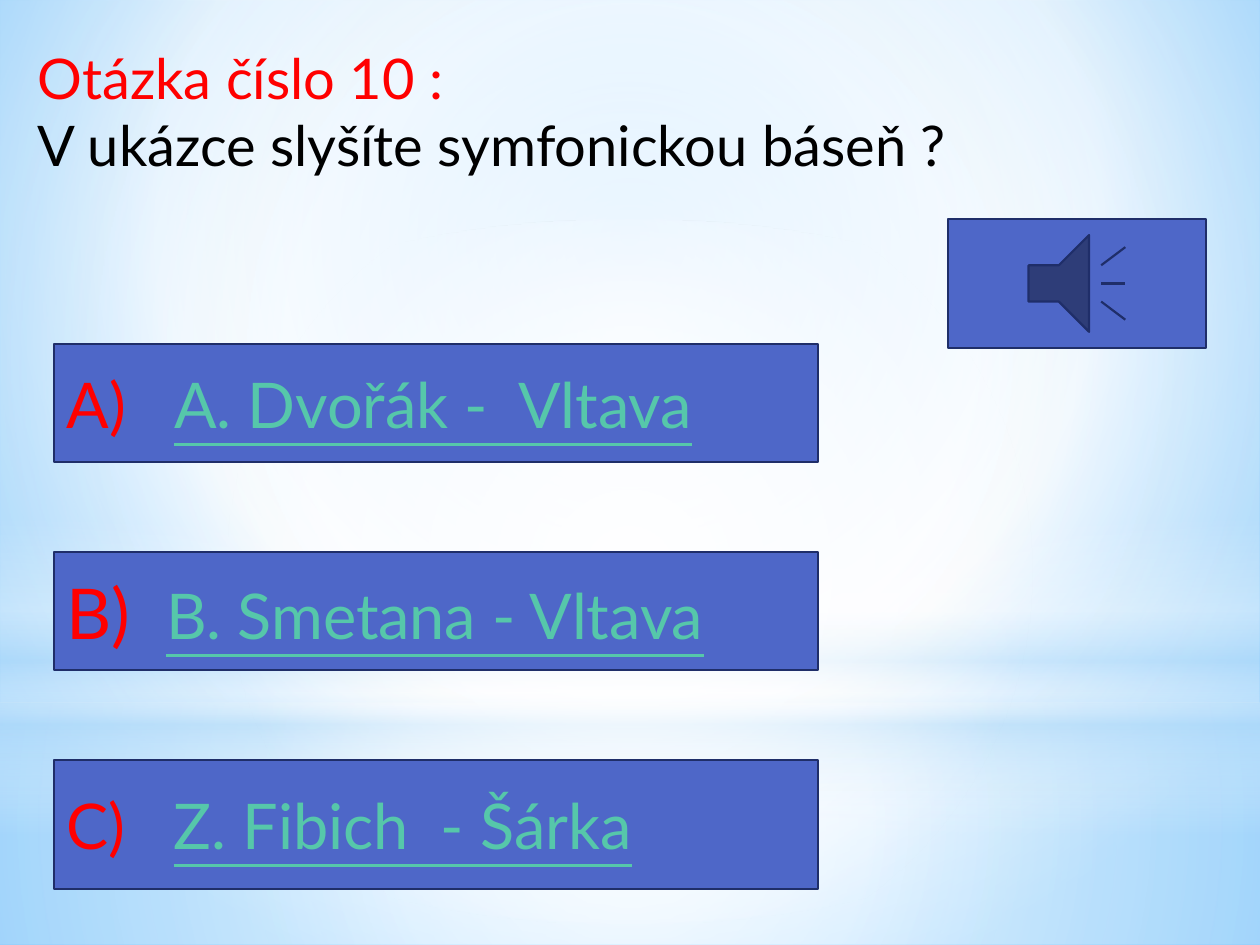
from lxml.etree import SubElement
from pptx import Presentation
from pptx.dml.color import RGBColor
from pptx.enum.shapes import MSO_SHAPE
from pptx.enum.text import MSO_ANCHOR, MSO_AUTO_SIZE, PP_ALIGN
from pptx.oxml.ns import qn
from pptx.util import Emu, Pt

SCALE = 914400 / 126
WIDTH, HEIGHT = 1260, 945
FONT = "Lato"
RED = RGBColor(0xFF, 0x00, 0x00)
BLACK = RGBColor(0x00, 0x00, 0x00)
WHITE = RGBColor(0xFF, 0xFF, 0xFF)
BLUE = RGBColor(0x4E, 0x67, 0xC8)
NAVY = RGBColor(0x1F, 0x2E, 0x69)
GREEN = RGBColor(0x56, 0xC7, 0xAA)
SKY = RGBColor(0x9E, 0xD5, 0xFF)
DEEP_SKY = RGBColor(0x5B, 0xB9, 0xFF)
PALE = RGBColor(0xB4, 0xDC, 0xFA)
CENTER = (50, 50, 50, 50)


def px(n):
    return Emu(round(n * SCALE))


def add_run(p, text, size=36, color=BLACK, underline=None):
    r = p.add_run()
    r.text = text
    r.font.name = FONT
    r.font.size = Pt(size)
    r.font.color.rgb = color
    r.font.underline = underline
    return r


def set_gradient(fill, owner, stops, focus=None, angle=90):
    fill.gradient()
    grad = next(owner.iter(qn("a:gradFill")))
    grad.clear()
    grad.set("rotWithShape", "1")
    gs_list = SubElement(grad, qn("a:gsLst"))
    for pos, color, alpha in stops:
        gs = SubElement(gs_list, qn("a:gs"), pos=str(pos * 1000))
        clr = SubElement(gs, qn("a:srgbClr"), val=str(color))
        if alpha < 100:
            SubElement(clr, qn("a:alpha"), val=str(alpha * 1000))
    if focus:
        path = SubElement(grad, qn("a:path"), path="circle")
        sides = {side: str(n * 1000) for side, n in zip("ltrb", focus)}
        SubElement(path, qn("a:fillToRect"), **sides)
    else:
        SubElement(grad, qn("a:lin"), ang=str(angle * 60000), scaled="0")


class QuizSlide:
    def __init__(self, prs):
        self.s = prs.slides.add_slide(prs.slide_layouts[5])

    def background(self, stops, focus):
        set_gradient(self.s.background.fill, self.s.element, stops, focus)

    def shape(self, kind, x, y, w, h):
        sp = self.s.shapes.add_shape(kind, px(x), px(y), px(w), px(h))
        sp.shadow.inherit = False
        return sp

    def glow(self, kind, y, h, stops, focus=None):
        sp = self.shape(kind, 0, y, WIDTH, h)
        sp.line.fill.background()
        set_gradient(sp.fill, sp.element, stops, focus)

    def button(self, kind, x, y, w, h):
        sp = self.shape(kind, x, y, w, h)
        sp.fill.solid()
        sp.fill.fore_color.rgb = BLUE
        sp.line.color.rgb = NAVY
        sp.line.width = Pt(1.25)
        return sp

    def answer(self, y, h, label, text, label_size=36):
        tf = self.button(MSO_SHAPE.RECTANGLE, 54, y, 764, h).text_frame
        tf.word_wrap = True
        tf.vertical_anchor = MSO_ANCHOR.MIDDLE
        p = tf.paragraphs[0]
        p.alignment = PP_ALIGN.LEFT
        add_run(p, label, size=label_size, color=RED)
        add_run(p, text, color=GREEN, underline=True)

    def title(self, x, y, w, h, heading, question):
        sp = self.s.shapes.title
        sp.left, sp.top, sp.width, sp.height = px(x), px(y), px(w), px(h)
        self.s.shapes.element.append(sp.element)
        tf = sp.text_frame
        tf.word_wrap = True
        tf.auto_size = MSO_AUTO_SIZE.SHAPE_TO_FIT_TEXT
        tf.vertical_anchor = MSO_ANCHOR.TOP
        p = tf.paragraphs[0]
        p.alignment = PP_ALIGN.LEFT
        add_run(p, heading, size=32, color=RED)
        p.add_line_break()
        add_run(p, question, size=32)


def main():
    prs = Presentation()
    prs.slide_width, prs.slide_height = px(WIDTH), px(HEIGHT)
    quiz = QuizSlide(prs)

    quiz.background([(0, SKY, 100), (60, WHITE, 100), (100, DEEP_SKY, 100)],
                    (20, 10, 20, 60))
    quiz.glow(MSO_SHAPE.RECTANGLE, 703, 242,
              [(0, WHITE, 91), (37, WHITE, 76), (100, PALE, 79)], CENTER)
    quiz.glow(MSO_SHAPE.RECTANGLE, 0, 703,
              [(0, WHITE, 89), (48, WHITE, 62), (100, PALE, 79)], CENTER)
    quiz.glow(MSO_SHAPE.RECTANGLE, 519, 315,
              [(0, WHITE, 0), (29, WHITE, 30), (45, PALE, 40),
               (55, WHITE, 26), (65, PALE, 60), (100, WHITE, 0)])
    quiz.glow(MSO_SHAPE.OVAL, 220, 703,
              [(0, WHITE, 100), (56, WHITE, 0)], CENTER)

    quiz.title(25, 37, 1201, 149,
               "Otázka číslo 10 :", "V ukázce slyšíte symfonickou báseň ?")
    quiz.button(MSO_SHAPE.ACTION_BUTTON_SOUND, 948, 219, 258, 129)

    answers = [
        (118, "A)   ", "A. Dvořák -  Vltava", 36),
        (118, "B)  ", "B. Smetana - Vltava", 40),
        (129, "C)   ", "Z. Fibich  - Šárka", 36),
    ]
    for i, (h, label, text, size) in enumerate(answers):
        quiz.answer(344 + 208 * i, h, label, text, label_size=size)

    prs.save("out.pptx")


if __name__ == "__main__":
    main()
